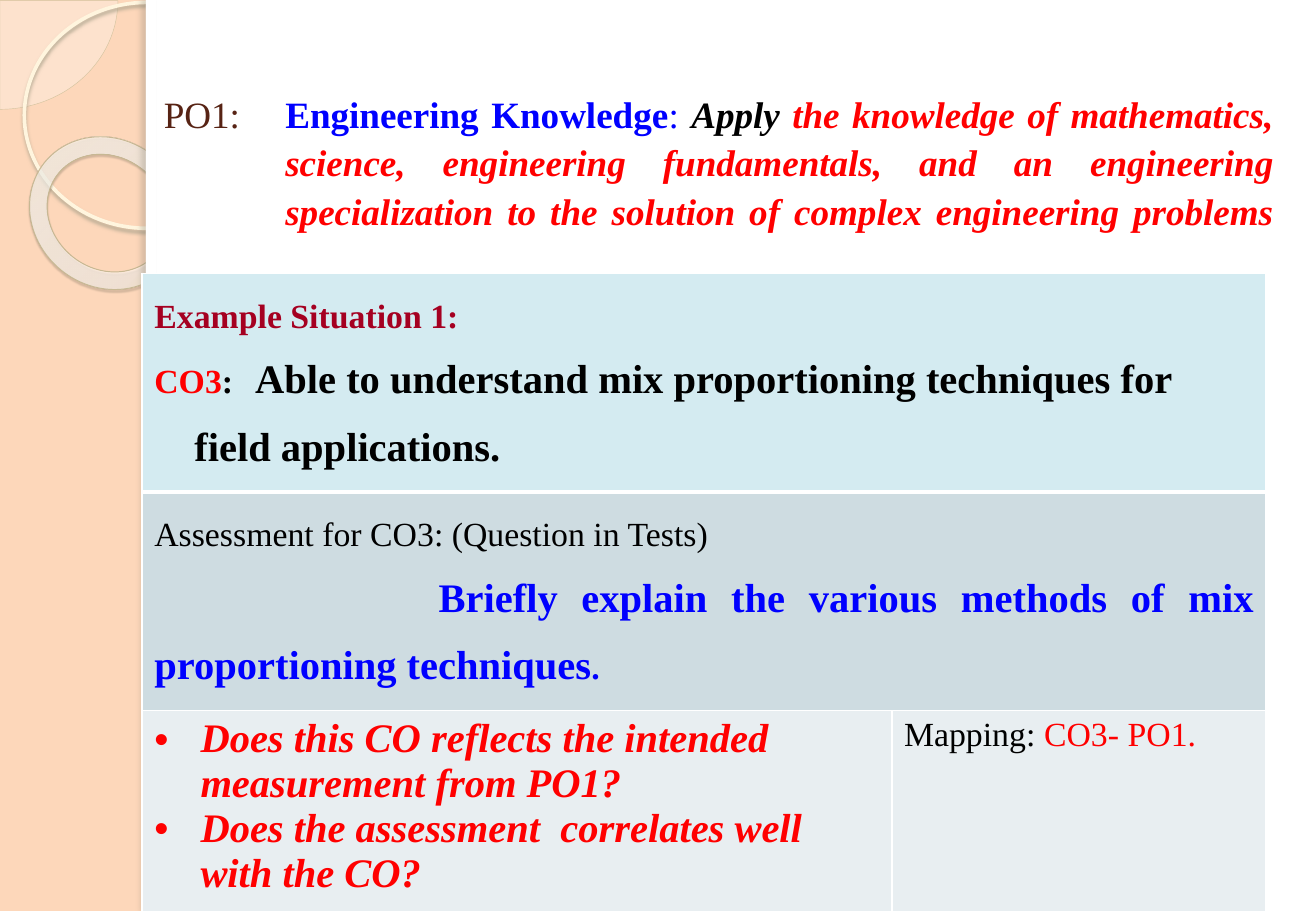
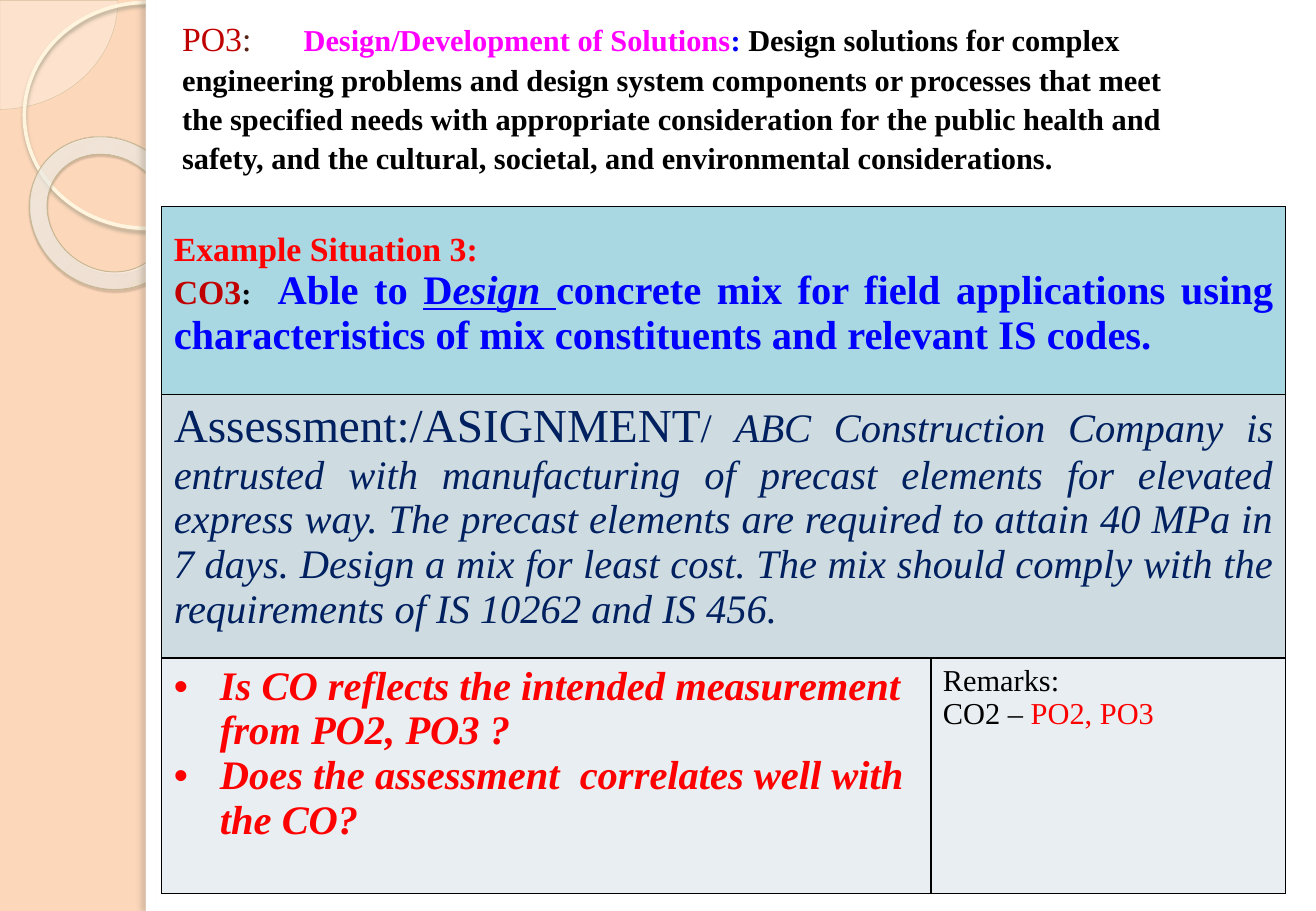
"""Build two slides that map course outcomes to programme outcomes."""
from lxml import etree
from pptx import Presentation
from pptx.dml.color import RGBColor
from pptx.enum.shapes import MSO_SHAPE as Shape
from pptx.enum.text import MSO_ANCHOR as Anchor, PP_ALIGN as Align
from pptx.oxml import parse_xml
from pptx.oxml.ns import nsdecls, qn
from pptx.util import Inches, Pt

FONT = "Times New Roman"
PEACH = RGBColor(0xFD, 0xD7, 0xBA)
CREAM = RGBColor(0xFE, 0xFA, 0xF4)
SAND = RGBColor(0xD3, 0xC3, 0x9F)
IVORY = RGBColor(0xFF, 0xF5, 0xDE)
KHAKI = RGBColor(0xC7, 0xB8, 0x93)
RING_SHADOW = RGBColor(0xB0, 0xA6, 0x8F)
DONUT_SHADOW = RGBColor(0x5A, 0x54, 0x44)
STRIP_SHADOW = RGBColor(0x73, 0x6F, 0x63)
WHITE = RGBColor(0xFF, 0xFF, 0xFF)
BLACK = RGBColor(0, 0, 0)
BROWN = RGBColor(0x57, 0x23, 0x14)
BLUE = RGBColor(0, 0, 0xFF)
NAVY = RGBColor(0, 0x20, 0x60)
RED = RGBColor(0xFF, 0, 0)
DARK_RED = RGBColor(0xC0, 0, 0)
CRIMSON = RGBColor(0xA5, 0, 0x21)
MAGENTA = RGBColor(0xFF, 0, 0xFF)
PALE_AQUA = RGBColor(0xD4, 0xEB, 0xF1)
AQUA = RGBColor(0xA9, 0xD7, 0xE2)
STEEL = RGBColor(0xCE, 0xDC, 0xE1)
MIST = RGBColor(0xE8, 0xEE, 0xF1)
DONUT_STOPS = ((0, "FFFCF6", 70), (70, "FFFEFB", 55), (100, "F0D28E", 60))


def add_child(parent, tag, **attributes):
    """Append a DrawingML element with the given attributes."""
    child = etree.SubElement(parent, qn(tag))
    for key, value in attributes.items():
        child.set(key, str(value))
    return child


def add_decor(slide, preset, box, fill=None, line=None, width=0, shadow=None):
    """Add a background shape, optionally with a soft shadow."""
    shape = slide.shapes.add_shape(preset, *map(Inches, box))
    if fill is None:
        shape.fill.background()
    else:
        shape.fill.solid()
        shape.fill.fore_color.rgb = fill
    if line is None:
        shape.line.fill.background()
    else:
        shape.line.color.rgb = line
        shape.line.width = Pt(width)
    shape.shadow.inherit = False
    if shadow:
        color, alpha, blur, distance, angle = shadow
        effects = shape.element.spPr.find(qn("a:effectLst"))
        outer = add_child(effects, "a:outerShdw", blurRad=Pt(blur), dist=Pt(distance),
                          dir=angle * 60000, algn="tl", rotWithShape=0)
        add_child(add_child(outer, "a:srgbClr", val=color), "a:alpha", val=alpha * 1000)
    return shape


def fill_donut(donut):
    """Give the donut its translucent radial gradient."""
    stops = "".join(
        f'<a:gs pos="{pos * 1000}"><a:srgbClr val="{color}"><a:alpha val="{alpha * 1000}"/>'
        "</a:srgbClr></a:gs>" for pos, color, alpha in DONUT_STOPS)
    gradient = parse_xml(
        f'<a:gradFill {nsdecls("a")} rotWithShape="1"><a:gsLst>{stops}</a:gsLst>'
        '<a:path path="circle"><a:fillToRect l="-408000" t="-50000" r="508000" b="150000"/>'
        "</a:path></a:gradFill>")
    properties = donut.element.spPr
    properties.replace(properties.find(qn("a:noFill")), gradient)


def add_backdrop(slide):
    """Draw the peach side band with its rings and the white page."""
    slide.background.fill.solid()
    slide.background.fill.fore_color.rgb = PEACH
    pie = add_decor(slide, Shape.PIE, (-0.97, -0.89, 1.94, 1.79), CREAM, SAND, 0.25)
    pie.adjustments[0], pie.adjustments[1] = 0, 54
    tint = pie.element.spPr.find(qn("a:solidFill")).find(qn("a:srgbClr"))
    add_child(tint, "a:alpha", val=33000)
    add_decor(slide, Shape.OVAL, (0.2, 0.02, 2.02, 1.86), None, IVORY, 2.15,
              (RING_SHADOW, 85, 2, 2, 90))
    donut = add_decor(slide, Shape.DONUT, (0.22, 1.15, 1.33, 1.21), None, KHAKI, 0.58,
                      (DONUT_SHADOW, 35, 1, 1.2, 75))
    donut.adjustments[0] = 0.12
    donut.rotation = 38.6
    fill_donut(donut)
    add_decor(slide, Shape.RECTANGLE, (1.2, 0, 9.63, 7.5), WHITE)
    add_decor(slide, Shape.RECTANGLE, (1.2, 0, 0.09, 7.5), WHITE,
              shadow=(STRIP_SHADOW, 25, 3, 3, 180))


def para(*runs, align=Align.LEFT, spacing=1, left=0, first=0, bullet=False, tab=None):
    """Describe one paragraph made of (text, size, colour, style) runs."""
    return dict(runs=runs, align=align, spacing=spacing, left=left, first=first,
                bullet=bullet, tab=tab)


def bullet(text):
    """Describe one red review question."""
    return para((text, 24, RED, "bi"), left=0.38, first=-0.38, bullet=True)


def write(frame, paragraphs):
    """Write the described paragraphs into a text frame."""
    for index, item in enumerate(paragraphs):
        paragraph = frame.add_paragraph() if index else frame.paragraphs[0]
        paragraph.alignment = item["align"]
        paragraph.line_spacing = item["spacing"]
        properties = paragraph._p.get_or_add_pPr()
        properties.set("marL", str(Inches(item["left"])))
        properties.set("indent", str(Inches(item["first"])))
        if item["bullet"]:
            add_child(properties, "a:buFont", typeface="Arial")
            add_child(properties, "a:buChar", char="•")
        if item["tab"]:
            stops = add_child(properties, "a:tabLst")
            add_child(stops, "a:tab", pos=Inches(item["tab"]), algn="l")
        for text, size, color, style in item["runs"]:
            run = paragraph.add_run()
            run.text = text
            font = run.font
            font.name, font.size, font.color.rgb = FONT, Pt(size), color
            font.bold, font.italic, font.underline = (mark in style for mark in "biu")


def add_title(slide, box, paragraph, top=0.05, right=0.1, bottom=0.05):
    """Add the outcome statement at the head of the slide."""
    frame = slide.shapes.add_textbox(*map(Inches, box)).text_frame
    frame.word_wrap = True
    frame.vertical_anchor = Anchor.MIDDLE
    frame.margin_top, frame.margin_right, frame.margin_bottom = map(Inches, (top, right, bottom))
    write(frame, [paragraph])
    return frame.paragraphs[0]


def set_borders(cell, color, top, bottom):
    """Draw the four borders of a cell."""
    properties = cell._tc.get_or_add_tcPr()
    for tag, width in (("a:lnL", 1), ("a:lnR", 1), ("a:lnT", top), ("a:lnB", bottom)):
        line = add_child(properties, tag, w=Pt(width))
        add_child(add_child(line, "a:solidFill"), "a:srgbClr", val=color)


def add_mapping(slide, origin, widths, heights, contents, header, border, header_rule=1):
    """Add the table: two full-width rows, then questions beside the mapping."""
    size = (sum(widths), sum(heights))
    table = slide.shapes.add_table(3, 2, *map(Inches, origin + size)).table
    table.first_row = table.horz_banding = False
    for column, width in zip(table.columns, widths):
        column.width = Inches(width)
    fills = (header, STEEL, MIST)
    rules = (1, header_rule, 1, 1)
    for index, (row, height) in enumerate(zip(table.rows, heights)):
        row.height = Inches(height)
        for cell in row.cells:
            set_borders(cell, border, rules[index], rules[index + 1])
            cell.fill.solid()
            cell.fill.fore_color.rgb = fills[index]
        if index < 2:
            row.cells[0].merge(row.cells[1])
    for (row, column), paragraphs in zip(((0, 0), (1, 0), (2, 0), (2, 1)), contents):
        write(table.cell(row, column).text_frame, paragraphs)


def build_knowledge(slide):
    """Fill the slide on engineering knowledge."""
    statement = add_title(slide, (1.25, 0.3, 9.33, 2.03), para(
        ("PO1:", 22, BROWN, ""), ("\t", 22, BROWN, ""),
        ("Engineering Knowledge", 22, BLUE, "b"), (": ", 22, BLUE, ""),
        ("Apply", 22, BLACK, "bi"),
        (" the knowledge of mathematics, science, engineering fundamentals, and an "
         "engineering specialization to the solution of complex engineering problems",
         22, RED, "bi"),
        align=Align.JUSTIFY, spacing=1.09, left=1, first=-1), top=0.35)
    statement.add_line_break()
    situation = [
        para(("Example Situation 1:", 20, CRIMSON, "b"), spacing=1.5),
        para(("CO3", 20, RED, "b"), (": \t", 20, BLACK, "b"),
             ("Able to understand mix proportioning techniques for field applications.",
              24, BLACK, "b"), spacing=1.5, left=0.33, first=-0.33, tab=1)]
    assessment = [
        para(("Assessment for CO3: (Question in Tests)", 20, BLACK, ""), spacing=1.5),
        para(("Briefly explain the various methods of mix proportioning techniques",
              24, BLUE, "b"), (".", 20, BLUE, "b"),
             align=Align.JUSTIFY, spacing=1.5, first=2.34)]
    questions = [bullet("Does this CO reflects the intended measurement from PO1?"),
                 bullet("Does the assessment  correlates well with the CO?")]
    mapping = [para(("Mapping: ", 20, BLACK, ""), ("CO3- PO1.", 20, RED, ""))]
    add_mapping(slide, (1.17, 2.25), (6.17, 3.08), (1.8, 1.2, 1.24),
                (situation, assessment, questions, mapping), PALE_AQUA, WHITE, 3)


def build_design(slide):
    """Fill the slide on design and development of solutions."""
    add_title(slide, (1.4, 0, 9.42, 1.83), para(
        ("PO3", 20, DARK_RED, ""), (":", 20, BROWN, ""), ("\t", 18, BROWN, ""),
        ("Design/Development of Solutions", 18, MAGENTA, "b"), (": ", 18, BLUE, "b"),
        ("Design solutions for complex engineering problems and design system components "
         "or processes that meet the specified needs with appropriate consideration for "
         "the public health and safety, and the cultural, societal, and environmental "
         "considerations.", 18, BLACK, "b"), spacing=1.07), right=1, bottom=0.31)
    situation = [
        para(("Example Situation 3:", 20, RED, "b"), spacing=1.5),
        para(("CO3", 20, DARK_RED, "b"), (":  ", 18, BLACK, "b"),
             ("Able to ", 24, BLUE, "b"), ("D", 24, BLUE, "bu"), ("esign ", 24, BLUE, "biu"),
             ("concrete mix for field applications using", 24, BLUE, "b"),
             (" ", 24, BLUE, "bu"),
             ("characteristics of mix constituents and relevant IS codes.", 24, BLUE, "b"),
             align=Align.JUSTIFY)]
    assessment = [para(
        ("Assessment:/ASIGNMENT", 28, NAVY, ""), ("/ ", 24, NAVY, ""),
        ("ABC Construction Company is entrusted with manufacturing of precast elements for "
         "elevated express way. The precast elements are required to attain 40 MPa in 7 days. "
         "Design a mix for least cost. The mix should comply with the requirements of "
         "IS 10262 and IS 456.", 24, NAVY, "i"), align=Align.JUSTIFY)]
    questions = [bullet("Is CO reflects the intended measurement from PO2, PO3 ?"),
                 bullet("Does the assessment  correlates well with the CO?")]
    remarks = [para(("Remarks:", 18, BLACK, "")),
               para(("CO2 – ", 18, BLACK, ""), ("PO2, PO3", 18, RED, ""))]
    add_mapping(slide, (1.33, 1.7), (6.33, 2.92), (1.55, 1.77, 1.94),
                (situation, assessment, questions, remarks), AQUA, BLACK)


def main():
    """Build and save the presentation."""
    deck = Presentation()
    deck.slide_width, deck.slide_height = Inches(10.83), Inches(7.5)
    for build in (build_knowledge, build_design):
        slide = deck.slides.add_slide(deck.slide_layouts[6])
        add_backdrop(slide)
        build(slide)
    deck.save("out.pptx")


if __name__ == "__main__":
    main()
